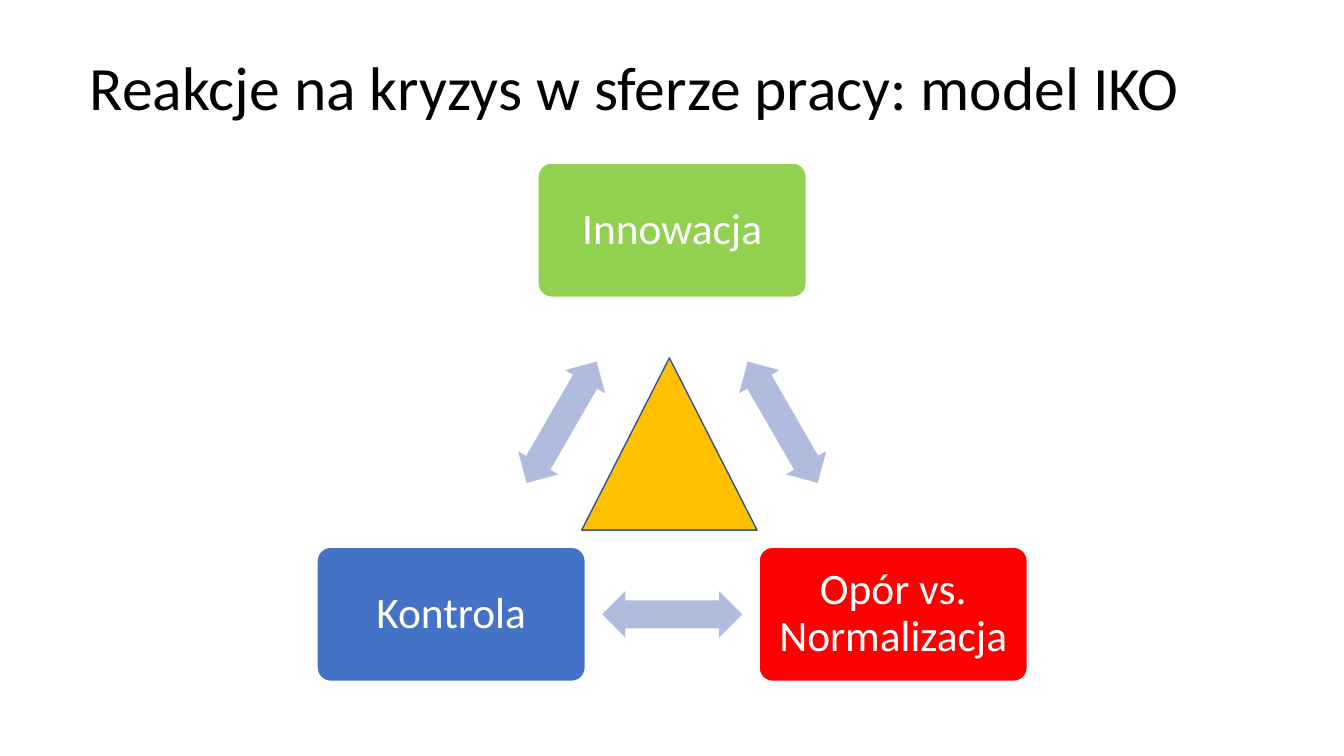
from pptx import Presentation
from pptx.dml.color import RGBColor
from pptx.enum.shapes import MSO_SHAPE
from pptx.enum.text import MSO_ANCHOR, MSO_AUTO_SIZE, PP_ALIGN
from pptx.util import Cm, Pt

BLACK = RGBColor(0x00, 0x00, 0x00)
WHITE = RGBColor(0xFF, 0xFF, 0xFF)
GREEN = RGBColor(0x92, 0xD0, 0x50)
RED = RGBColor(0xFF, 0x00, 0x00)
BLUE = RGBColor(0x44, 0x72, 0xC4)
LAVENDER = RGBColor(0xB0, 0xBC, 0xDE)
GOLD = RGBColor(0xFF, 0xC0, 0x00)
NAVY = RGBColor(0x32, 0x54, 0x91)

BOX_WIDTH, BOX_HEIGHT = 6.76, 3.38
ARROW_WIDTH, ARROW_HEIGHT = 3.53, 1.17


def add_centred(page, kind, centre, width, height, fill):
    x, y = centre
    shape = page.shapes.add_shape(
        kind, Cm(x - width / 2), Cm(y - height / 2), Cm(width), Cm(height))
    shape.shadow.inherit = False
    shape.fill.solid()
    shape.fill.fore_color.rgb = fill
    return shape


def write(frame, text, size, color, alignment):
    frame.text = text
    frame.word_wrap = True
    frame.auto_size = MSO_AUTO_SIZE.NONE
    frame.vertical_anchor = MSO_ANCHOR.MIDDLE
    para = frame.paragraphs[0]
    para.alignment = alignment
    para.line_spacing = 0.9
    span = para.runs[0]
    span.font.name = "Calibri"
    span.font.size = Pt(size)
    span.font.color.rgb = color


deck = Presentation()
deck.slide_width, deck.slide_height = Cm(33.87), Cm(19.05)
page = deck.slides.add_slide(deck.slide_layouts[5])

title = page.shapes.title
title.left, title.top, title.width, title.height = Cm(2.01), Cm(0.43), Cm(29.21), Cm(3.68)
write(title.text_frame, "Reakcje na kryzys w sferze pracy: model IKO", 44, BLACK, PP_ALIGN.LEFT)

reactions = [
    ("Innowacja", (16.94, 5.8), GREEN),
    ("Opór vs. Normalizacja", (22.51, 15.48), RED),
    ("Kontrola", (11.37, 15.48), BLUE),
]

for label, centre, color in reactions:
    box = add_centred(page, MSO_SHAPE.ROUNDED_RECTANGLE, centre, BOX_WIDTH, BOX_HEIGHT, color)
    box.adjustments[0] = 0.1
    box.line.color.rgb = WHITE
    box.line.width = Pt(1)
    frame = box.text_frame
    frame.margin_left = frame.margin_right = Cm(0.33)
    frame.margin_top = frame.margin_bottom = Cm(0.33)
    write(frame, label, 31, WHITE, PP_ALIGN.CENTER)

for index, (label, (x, y), color) in enumerate(reactions):
    next_x, next_y = reactions[(index + 1) % len(reactions)][1]
    middle = ((x + next_x) / 2, (y + next_y) / 2)
    arrow = add_centred(page, MSO_SHAPE.LEFT_RIGHT_ARROW, middle, ARROW_WIDTH, ARROW_HEIGHT, LAVENDER)
    arrow.adjustments[0] = 0.6
    arrow.adjustments[1] = 0.5
    arrow.rotation = 60 + 120 * index
    arrow.line.fill.background()

triangle = add_centred(page, MSO_SHAPE.ISOSCELES_TRIANGLE, (16.87, 11.19), 4.42, 4.34, GOLD)
triangle.line.color.rgb = NAVY
triangle.line.width = Pt(1)

deck.save("out.pptx")
